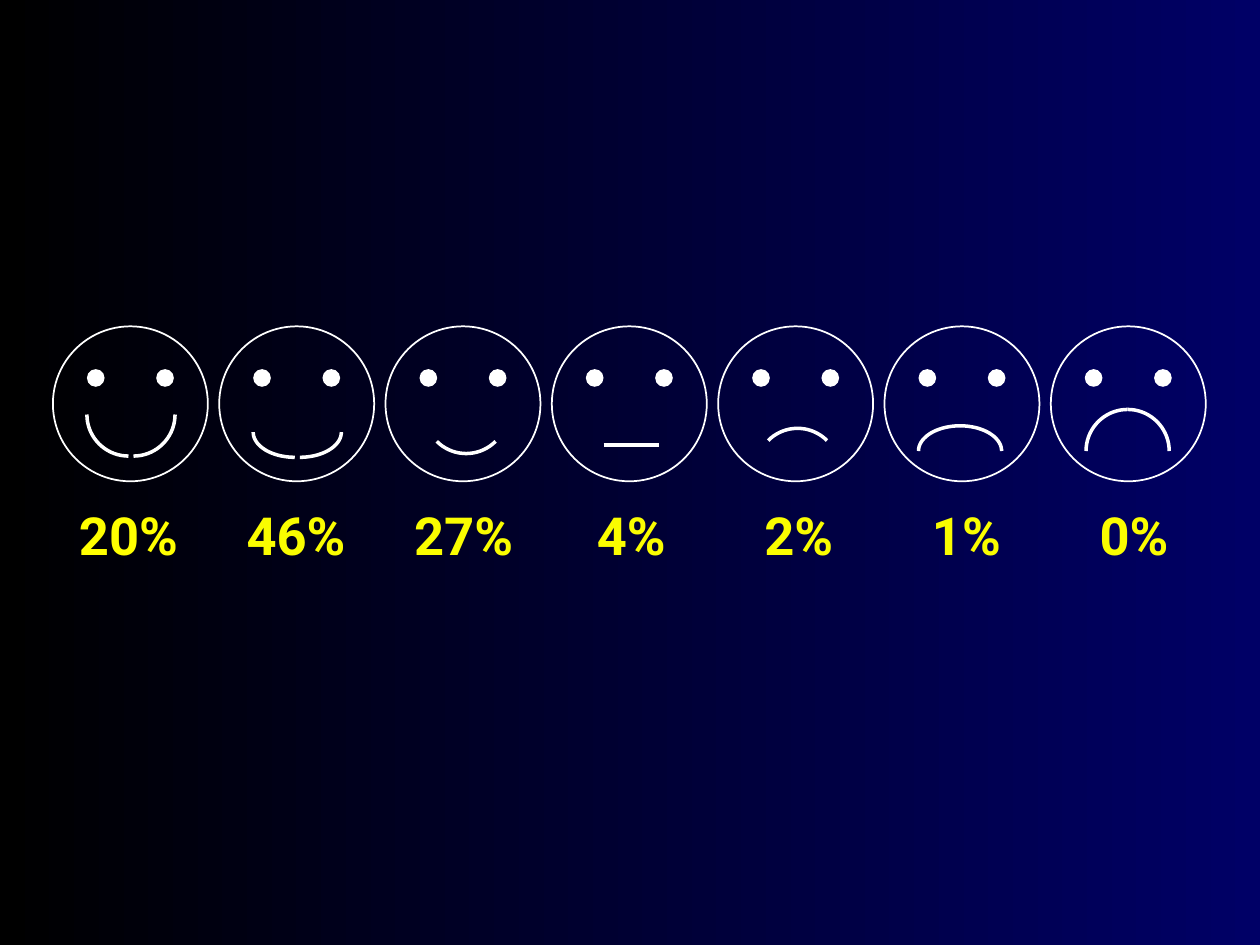
from dataclasses import dataclass
from math import cos, radians, sin

from lxml import etree
from pptx import Presentation
from pptx.dml.color import RGBColor
from pptx.enum.shapes import MSO_CONNECTOR, MSO_SHAPE
from pptx.enum.text import MSO_ANCHOR, MSO_AUTO_SIZE, PP_ALIGN
from pptx.oxml.ns import qn
from pptx.shapes.shapetree import GroupShapes
from pptx.slide import Slide
from pptx.util import Inches, Pt

OVAL = MSO_SHAPE.OVAL
STRAIGHT = MSO_CONNECTOR.STRAIGHT
MIDDLE = MSO_ANCHOR.MIDDLE
CENTER = PP_ALIGN.CENTER
GROW = MSO_AUTO_SIZE.SHAPE_TO_FIT_TEXT

COLORS = {
    "night": "000000",
    "navy": "000066",
    "outline": "FFFFFF",
    "first_label": "FFFF00",
    "label": "FAFD00",
}
FONT = "Roboto"

# Row of faces and labels, in inches
FACE_LEFT, FACE_TOP, FACE_SIZE, FACE_PITCH = 0.42, 2.59, 1.23, 1.32
EYE_OFFSETS, EYE_TOP, EYE_SIZE = (0.27, 0.82), 2.93, 0.14
LABEL_LEFT, LABEL_TOP, LABEL_PITCH = 0.44, 3.94, 1.33
LABEL_WIDTH, LABEL_HEIGHT = 1.16, 0.6
MOUTH_RADIUS, ARC_STEP = 0.33, 5


@dataclass(frozen=True)
class Arc:
    """Part of an ellipse; x is measured from the left of the face."""
    x: float
    y: float
    height: float
    start: int
    end: int


@dataclass(frozen=True)
class Face:
    share: str
    mouth: tuple[Arc, ...] = ()  # no arcs means a straight mouth


FACES = (
    Face("20%", (Arc(0.6, 3.29, 0.33, 90, 180), Arc(0.64, 3.29, 0.33, 0, 90))),
    Face("46%", (Arc(0.6, 3.43, 0.2, 90, 180), Arc(0.64, 3.43, 0.2, 0, 90))),
    Face("27%", (Arc(0.64, 3.27, 0.33, 45, 135),)),
    Face("4%"),
    Face("2%", (Arc(0.63, 3.73, 0.33, 225, 315),)),
    Face("1%", (Arc(0.6, 3.58, 0.2, 180, 270), Arc(0.6, 3.58, 0.2, 270, 360))),
    Face("0%", (Arc(0.61, 3.58, 0.33, 180, 270), Arc(0.61, 3.58, 0.33, 270, 360))),
)


def rgb(name: str) -> RGBColor:
    return RGBColor.from_string(COLORS[name])


def paint_background(slide: Slide) -> None:
    fill = slide.background.fill
    fill.gradient()
    fill.gradient_angle = 0
    for stop, position, name in zip(fill.gradient_stops, (0, 1), ("night", "navy")):
        stop.position = position
        stop.color.rgb = rgb(name)


def draw_circle(shapes: GroupShapes, left: float, top: float, size: float,
                filled: bool) -> None:
    circle = shapes.add_shape(OVAL, Inches(left), Inches(top), Inches(size), Inches(size))
    circle.shadow.inherit = False
    if filled:
        circle.fill.solid()
        circle.fill.fore_color.rgb = rgb("outline")
        circle.line.fill.background()
    else:
        circle.fill.background()
        circle.line.color.rgb = rgb("outline")
        circle.line.width = Pt(1)


def draw_arc(shapes: GroupShapes, face_left: float, arc: Arc) -> None:
    points = [
        (Inches(face_left + arc.x + MOUTH_RADIUS * cos(radians(angle))),
         Inches(arc.y + arc.height * sin(radians(angle))))
        for angle in range(arc.start, arc.end + 1, ARC_STEP)
    ]
    builder = shapes.build_freeform(*points[0])
    builder.add_line_segments(points[1:], close=False)
    curve = builder.convert_to_shape()
    curve.shadow.inherit = False
    curve.fill.background()
    curve.line.color.rgb = rgb("outline")
    curve.line.width = Pt(2)


def draw_straight_mouth(shapes: GroupShapes, face_left: float) -> None:
    y = Inches(3.53)
    mouth = shapes.add_connector(
        STRAIGHT, Inches(face_left + 0.41), y, Inches(face_left + 0.85), y)
    mouth.line.color.rgb = rgb("outline")
    mouth.line.width = Pt(2)
    etree.SubElement(mouth._element.spPr, qn("a:effectLst"))


def draw_face(slide: Slide, left: float, face: Face) -> None:
    shapes = slide.shapes.add_group_shape().shapes
    draw_circle(shapes, left, FACE_TOP, FACE_SIZE, filled=False)
    for offset in EYE_OFFSETS:
        draw_circle(shapes, left + offset, EYE_TOP, EYE_SIZE, filled=True)
    for arc in face.mouth:
        draw_arc(shapes, left, arc)
    if not face.mouth:
        draw_straight_mouth(shapes, left)


def draw_label(slide: Slide, left: float, share: str, color: str) -> None:
    label = slide.shapes.add_textbox(
        Inches(left), Inches(LABEL_TOP), Inches(LABEL_WIDTH), Inches(LABEL_HEIGHT))
    frame = label.text_frame
    frame.word_wrap = True
    frame.auto_size = GROW
    frame.vertical_anchor = MIDDLE
    paragraph = frame.paragraphs[0]
    paragraph.alignment = CENTER
    run = paragraph.add_run()
    run.text = share
    run.font.name = FONT
    run.font.size = Pt(30)
    run.font.bold = True
    run.font.color.rgb = rgb(color)


def main() -> None:
    prs = Presentation()
    prs.slide_width, prs.slide_height = Inches(10), Inches(7.5)
    slide = prs.slides.add_slide(prs.slide_layouts[6])
    paint_background(slide)

    # Faces from happiest to saddest, each with its share below
    for i, face in enumerate(FACES):
        draw_label(slide, LABEL_LEFT + i * LABEL_PITCH, face.share,
                   "label" if i else "first_label")
        draw_face(slide, FACE_LEFT + i * FACE_PITCH, face)

    prs.save("out.pptx")


if __name__ == "__main__":
    main()
